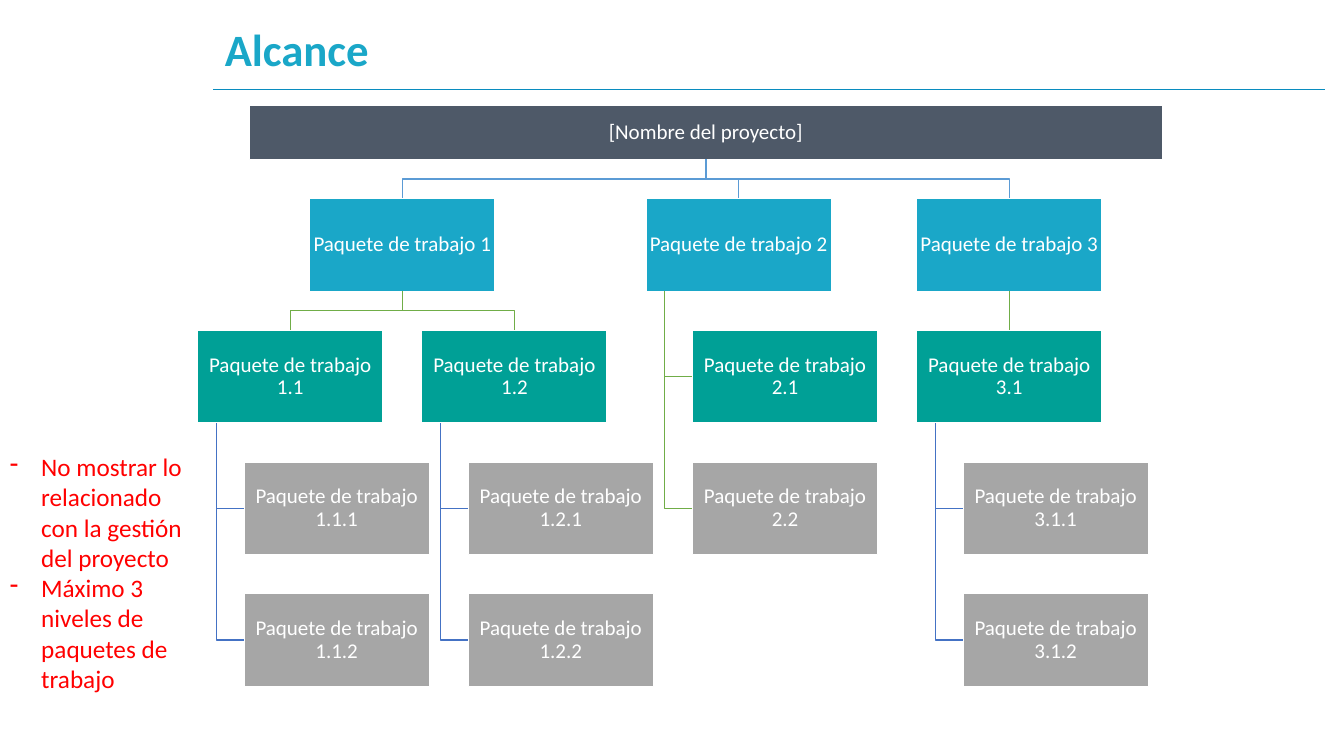
from dataclasses import dataclass

from lxml.etree import SubElement
from pptx import Presentation
from pptx.dml.color import RGBColor
from pptx.enum.shapes import MSO_CONNECTOR, MSO_SHAPE
from pptx.enum.text import MSO_ANCHOR, MSO_AUTO_SIZE, PP_ALIGN
from pptx.oxml.ns import qn
from pptx.util import Cm, Pt

TITLE = "Alcance"
PROJECT = "[Nombre del proyecto]"
PREFIX = "Paquete de trabajo "
TREE = {
    "": ["1", "2", "3"],
    "1": ["1.1", "1.2"],
    "2": ["2.1", "2.2"],
    "3": ["3.1"],
    "1.1": ["1.1.1", "1.1.2"],
    "1.2": ["1.2.1", "1.2.2"],
    "3.1": ["3.1.1", "3.1.2"],
}
NOTES = [
    "No mostrar lo relacionado con la gestión del proyecto",
    "Máximo 3 niveles de paquetes de trabajo",
]

LEFT, TOP = 4.98, 5.0
BOX_W, BOX_H = 4.67, 2.34
GAP, ROW_STEP = 0.98, 3.32
INDENT, STEM = 1.17, 0.47
ROOT_TOP, ROOT_W, ROOT_H = 2.65, 23.01, 1.37


@dataclass(frozen=True)
class Theme:
    font: str = "Calibri"
    title: str = "1AA7C8"
    rule: str = "098CBF"
    root: str = "4E5968"
    rows: tuple = ("1AA7C8", "00A096", "A6A6A6", "A6A6A6")
    links: tuple = ("5B9BD5", "70AD47", "4472C4")
    white: str = "FFFFFF"
    note: str = "FF0000"
    title_size: int = 32
    box_size: int = 15
    note_size: int = 18


T = Theme()


def add_text(tf, lines, size, color, bold=False, align=PP_ALIGN.LEFT,
             anchor=MSO_ANCHOR.MIDDLE, spacing=0.9, inset=None, bullet=None):
    """Write lines into a text frame with one format."""
    tf.word_wrap = True
    tf.auto_size = MSO_AUTO_SIZE.NONE
    tf.vertical_anchor = anchor
    if inset is not None:
        tf.margin_left = tf.margin_right = Cm(inset)
        tf.margin_top = tf.margin_bottom = Cm(inset)
    for i, line in enumerate(lines):
        p = tf.add_paragraph() if i else tf.paragraphs[0]
        if bullet:
            pPr = p._p.get_or_add_pPr()
            pPr.set("marL", str(Cm(0.79)))
            pPr.set("indent", str(-Cm(0.79)))
            SubElement(pPr, qn("a:buChar")).set("char", bullet)
        p.alignment, p.line_spacing = align, spacing
        r = p.add_run()
        r.text = line
        r.font.name, r.font.size, r.font.bold = T.font, Pt(size), bold
        r.font.color.rgb = RGBColor.from_string(color)


def add_box(s, text, x, y, w, h, fill):
    """Add a filled, labelled rectangle."""
    sp = s.shapes.add_shape(MSO_SHAPE.RECTANGLE, Cm(x), Cm(y), Cm(w), Cm(h))
    sp.shadow.inherit = False
    sp.fill.solid()
    sp.fill.fore_color.rgb = RGBColor.from_string(fill)
    sp.line.color.rgb = RGBColor.from_string(T.white)
    sp.line.width = Pt(1)
    add_text(sp.text_frame, [text], T.box_size, T.white,
             align=PP_ALIGN.CENTER, inset=0.03)
    return sp


def add_line(s, x1, y1, x2, y2, color, width):
    """Add a straight connector without shadow."""
    cx = s.shapes.add_connector(MSO_CONNECTOR.STRAIGHT, Cm(x1), Cm(y1), Cm(x2), Cm(y2))
    SubElement(cx._element.spPr, qn("a:effectLst"))
    cx.line.color.rgb = RGBColor.from_string(color)
    cx.line.width = Pt(width)
    return cx


def add_elbow(s, points, color):
    """Add an open bent line through points."""
    pts = [(Cm(x), Cm(y)) for x, y in points]
    fb = s.shapes.build_freeform(*pts[0])
    fb.add_line_segments(pts[1:], close=False)
    sp = fb.convert_to_shape()
    sp.shadow.inherit = False
    sp.fill.background()
    sp.line.color.rgb = RGBColor.from_string(color)
    sp.line.width = Pt(1)


def hangs(name):
    """Tell whether the children of a package are stacked below it."""
    return not any(kid in TREE for kid in TREE[name])


def place(name, row, free, spots):
    """Pack a package and its children to the left, row by row."""
    kids = TREE[name]
    if hangs(name):
        x = max([free[row]] + [free[row + i] - INDENT for i in range(1, len(kids) + 1)])
        below = [(kid, row + i, x + INDENT) for i, kid in enumerate(kids, 1)]
    else:
        for kid in kids:
            place(kid, row + 1, free, spots)
        x = (spots[kids[0]][0] + spots[kids[-1]][0]) / 2
        below = []
    for label, level, left in [(name, row, x)] + below:
        spots[label] = (left, level)
        free[level] = left + BOX_W + GAP


def link(s, name, spots, shapes):
    """Join a package to each of its children."""
    color = T.links[name.count(".") + 1 if name else 0]
    x, row = spots[name]
    mid = x + BOX_W / 2
    bottom = TOP + row * ROW_STEP + BOX_H if name else ROOT_TOP + ROOT_H
    for kid in TREE[name]:
        left, level = spots[kid]
        top, center = TOP + level * ROW_STEP, left + BOX_W / 2
        if hangs(name):
            y = top + BOX_H / 2
            add_elbow(s, [(x + STEM, bottom), (x + STEM, y), (left, y)], color)
        elif abs(center - mid) < 0.01:
            cx = add_line(s, mid, bottom, center, top, color, 1)
            cx.begin_connect(shapes[name], 2)
            cx.end_connect(shapes[kid], 0)
        else:
            y = (bottom + top) / 2
            add_elbow(s, [(mid, bottom), (mid, y), (center, y), (center, top)], color)


def main():
    """Build the scope slide."""
    prs = Presentation()
    prs.slide_width, prs.slide_height = Cm(33.87), Cm(19.05)
    s = prs.slides.add_slide(prs.slide_layouts[5])
    title = s.shapes.title
    title.left, title.top, title.width, title.height = Cm(5.41), Cm(0.58), Cm(27.97), Cm(1.45)
    add_text(title.text_frame, [TITLE], T.title_size, T.title, bold=True)
    add_line(s, 5.38, 2.24, 33.4, 2.24, T.rule, 0.5)

    spots = {}
    place("", -1, {row: LEFT for row in range(-1, len(T.rows))}, spots)
    root_x = spots[""][0] + (BOX_W - ROOT_W) / 2
    shapes = {"": add_box(s, PROJECT, root_x, ROOT_TOP, ROOT_W, ROOT_H, T.root)}
    for name, (x, row) in spots.items():
        if name:
            shapes[name] = add_box(s, PREFIX + name, x, TOP + row * ROW_STEP,
                                   BOX_W, BOX_H, T.rows[row])
    for name in TREE:
        link(s, name, spots, shapes)

    notes = s.shapes.add_textbox(Cm(0), Cm(11.25), Cm(4.93), Cm(6.4))
    add_text(notes.text_frame, NOTES, T.note_size, T.note,
             anchor=MSO_ANCHOR.TOP, spacing=1.0, bullet="-")
    prs.save("out.pptx")


if __name__ == "__main__":
    main()
